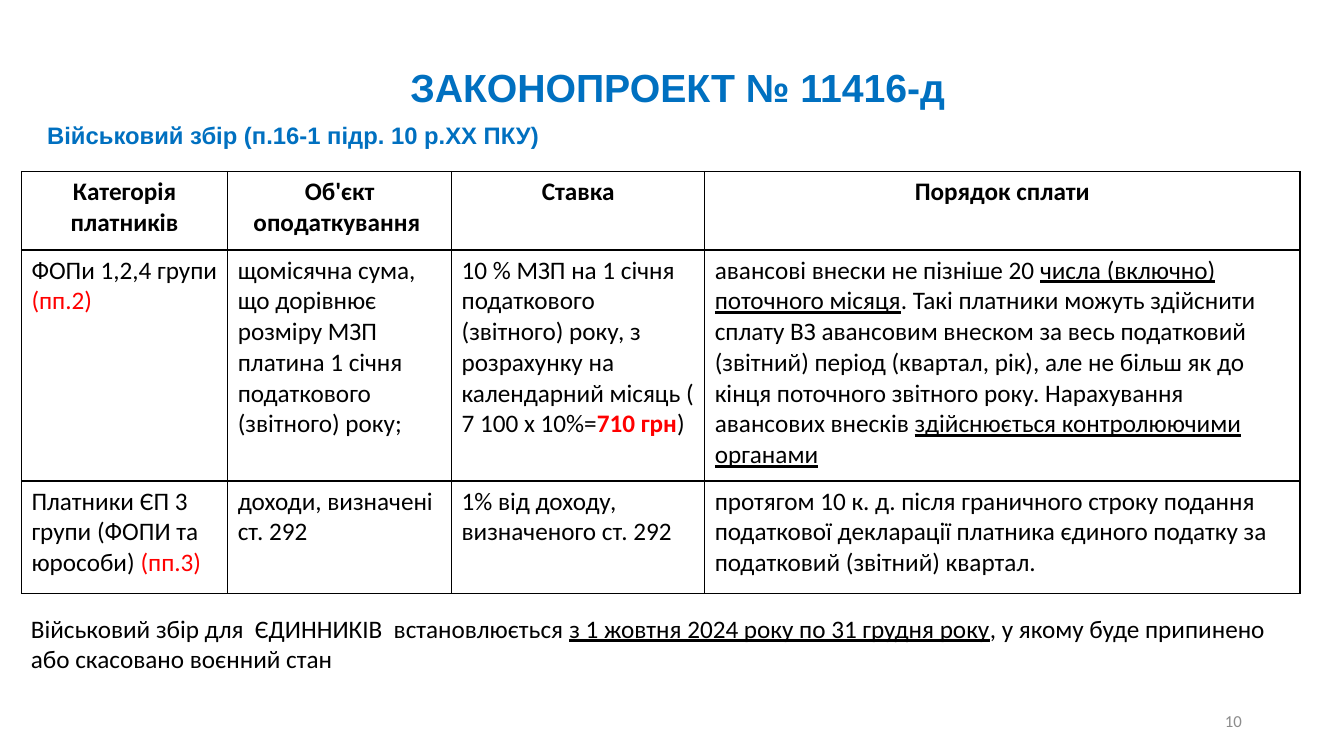
"""Build the slide on the military levy for single-tax payers."""
from lxml.etree import SubElement
from pptx import Presentation
from pptx.dml.color import RGBColor
from pptx.enum.text import MSO_ANCHOR, MSO_AUTO_SIZE, PP_ALIGN
from pptx.oxml.ns import qn
from pptx.util import Cm, Pt

HUES = {"ink": "000000", "red": "FF0000", "blue": "0070C0", "dark": "3B3838", "grey": "8C8C8C"}


def write(par, parts, size=18, font="Calibri"):
    """Add runs to a paragraph; each part is text or (text, hue, marks)."""
    for part in parts:
        text, hue, marks = (part, "ink", "") if isinstance(part, str) else part
        run = par.add_run()
        run.text = text
        run.font.size = Pt(size)
        run.font.name = font
        run.font.bold = "b" in marks
        run.font.underline = "u" in marks
        run.font.color.rgb = RGBColor.from_string(HUES[hue])


def add_box(left, top, width, height):
    """Add a wrapping text box and return its text frame."""
    frame = slide.shapes.add_textbox(Cm(left), Cm(top), Cm(width), Cm(height)).text_frame
    frame.word_wrap = True
    return frame


deck = Presentation()
deck.slide_width, deck.slide_height = Cm(33.87), Cm(19.05)
slide = deck.slides.add_slide(deck.slide_layouts[5])

title = slide.shapes.title
title.left, title.top, title.width, title.height = Cm(0), Cm(1.32), Cm(33.87), Cm(1.7)
frame = title.text_frame
frame.auto_size = MSO_AUTO_SIZE.NONE
frame.vertical_anchor = MSO_ANCHOR.MIDDLE
frame.margin_left = frame.margin_right = Cm(0.18)
frame.margin_top = frame.margin_bottom = Cm(0.08)
head = frame.paragraphs[0]
head.alignment = PP_ALIGN.CENTER
head.line_spacing = 0.9
write(head, [(" ", "dark", "b")], 36)
write(head, [("ЗАКОНОПРОЕКТ № 11416-д", "blue", "b")], 28, "Arial")

lead = add_box(0.94, 2.92, 30.73, 0.99).paragraphs[0]
lead.space_after = Pt(6)
write(lead, [("Військовий збір (п.16-1 підр. 10 р.ХХ ПКУ)", "blue", "b")], 17, "Arial")

heads = ["Категорія платників", "Об'єкт оподаткування ", "Ставка", "Порядок сплати"]
rows = [
    [[[(name, "ink", "b")]] for name in heads],
    [
        [["ФОПи 1,2,4 групи"], [("(пп.2)", "red", "")]],
        [["щомісячна сума, що дорівнює розміру МЗП платина 1 січня податкового (звітного) року;"]],
        [["10 % МЗП на 1 січня податкового (звітного) року, з розрахунку на "
          "календарний місяць ( 7 100 х 10%=", ("710 грн", "red", "b"), ")"]],
        [["авансові внески не пізніше 20 ", ("числа (включно) поточного місяця", "ink", "u"),
          ". Такі платники можуть здійснити сплату ВЗ авансовим внеском за весь податковий "
          "(звітний) період (квартал, рік), але не більш як до кінця поточного звітного року. "
          "Нарахування авансових внесків ",
          ("здійснюється контролюючими органами", "ink", "u")]],
    ],
    [
        [["Платники ЄП 3 групи (ФОПИ та юрособи) ", ("(пп.3)", "red", "")]],
        [["доходи, визначені ст. 292"]],
        [["1% від доходу, визначеного ст. 292"]],
        [["протягом 10 к. д. після граничного строку подання податкової декларації "
          "платника єдиного податку за податковий (звітний) квартал."]],
    ],
]
wides = [5.2, 5.64, 6.38, 15]
highs = [1.98, 5.82, 2.84]
grid = slide.shapes.add_table(
    len(rows), len(heads), Cm(0.54), Cm(4.32), Cm(sum(wides)), Cm(sum(highs))).table
for col, wide in zip(grid.columns, wides):
    col.width = Cm(wide)
for r, (row, high) in enumerate(zip(rows, highs)):
    grid.rows[r].height = Cm(high)
    for c, paras in enumerate(row):
        cell = grid.cell(r, c)
        props = cell._tc.get_or_add_tcPr()
        for side in ("lnL", "lnR", "lnT", "lnB"):
            line = SubElement(props, qn(f"a:{side}"), w=str(Pt(1)))
            paint = SubElement(line, qn("a:solidFill"))
            SubElement(paint, qn("a:srgbClr"), val=HUES["ink"])
        cell.fill.background()
        for n, parts in enumerate(paras):
            par = cell.text_frame.add_paragraph() if n else cell.text_frame.paragraphs[0]
            par.alignment = PP_ALIGN.LEFT if r else PP_ALIGN.CENTER
            write(par, parts)

note = add_box(0.53, 15.32, 32.41, 1.8)
note.auto_size = MSO_AUTO_SIZE.SHAPE_TO_FIT_TEXT
write(note.paragraphs[0], [
    "Військовий збір для  ЄДИННИКІВ  встановлюється ",
    ("з 1 жовтня 2024 року по 31 грудня року", "ink", "u"),
    ", у якому буде припинено або скасовано воєнний стан"])

page = add_box(23.93, 17.65, 7.62, 1.02)
page.vertical_anchor = MSO_ANCHOR.MIDDLE
page.paragraphs[0].alignment = PP_ALIGN.RIGHT
write(page.paragraphs[0], [("10", "grey", "")], 12)

deck.save("out.pptx")
